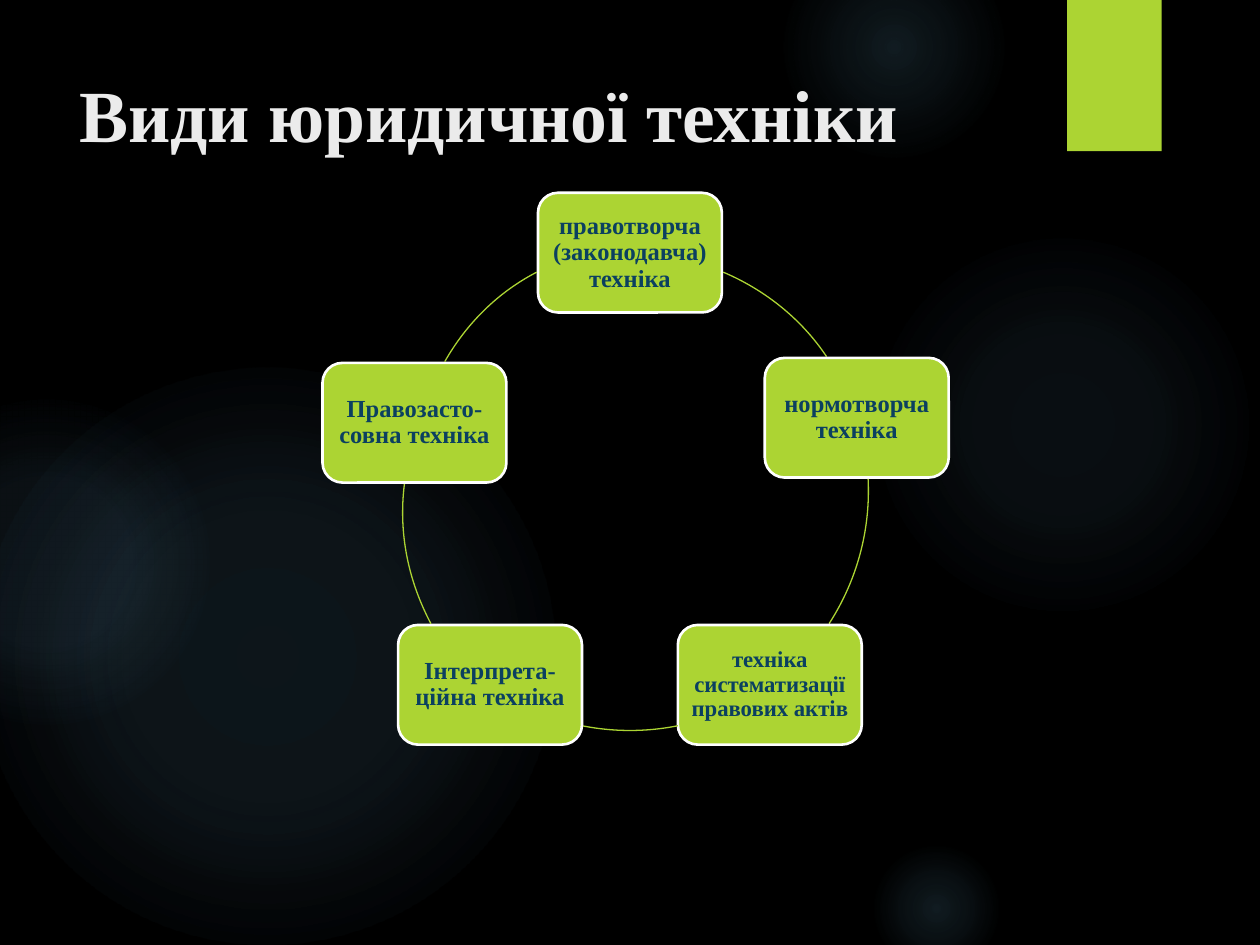
from typing import NamedTuple

from pptx import Presentation
from pptx.dml.color import RGBColor
from pptx.enum.shapes import MSO_SHAPE
from pptx.enum.text import MSO_ANCHOR, PP_ALIGN
from pptx.oxml import parse_xml
from pptx.oxml.ns import nsdecls, qn
from pptx.shapes.autoshape import Shape
from pptx.slide import Slide
from pptx.text.text import TextFrame
from pptx.util import Inches, Pt

BLACK = RGBColor(0x00, 0x00, 0x00)
WHITE = RGBColor(0xFF, 0xFF, 0xFF)
LIGHT = RGBColor(0xEB, 0xEB, 0xEB)
LIME = RGBColor(0xAC, 0xD4, 0x33)
NAVY = RGBColor(0x0B, 0x40, 0x60)
GLOW_BLUE = RGBColor(0x7A, 0xC4, 0xF0)
FONT = "Times New Roman"
NODE_WIDTH, NODE_HEIGHT = 1.46, 0.95
RING_SIZE = 3.79


class Point(NamedTuple):
    x: float
    y: float


class Glow(NamedTuple):
    left: float
    top: float
    size: float
    center_alpha: int
    middle_alpha: int
    edge: int


class Node(NamedTuple):
    left: float
    top: float
    text: str
    size: int = 14


class Arc(NamedTuple):
    ring: Point
    start: Point
    control_1: Point
    control_2: Point
    end: Point


GLOWS = [
    Glow(6.89, 1.83, 3.08, 7, 6, 69),
    Glow(6.22, -0.5, 1.75, 14, 7, 73),
    Glow(6.89, 6.67, 1.08, 14, 7, 66),
    Glow(-0.17, 2.92, 4.58, 11, 10, 75),
    Glow(-0.92, 3.17, 2.58, 8, 8, 72),
]
NODES = [
    Node(4.27, 1.53, "правотворча (законодавча) техніка"),
    Node(6.07, 2.84, "нормотворча техніка"),
    Node(5.38, 4.96, "техніка систематизації правових актів", 13),
    Node(3.16, 4.96, "Інтерпрета-ційна техніка"),
    Node(2.56, 2.88, "Правозасто-совна техніка"),
]
MAIN_RING = Point(3.11, 2)
ARCS = [
    Arc(MAIN_RING, Point(5.74, 2.16), Point(6.07, 2.3), Point(6.36, 2.53), Point(6.56, 2.83)),
    Arc(MAIN_RING, Point(6.89, 3.8), Point(6.91, 4.21), Point(6.8, 4.61), Point(6.58, 4.95)),
    Arc(MAIN_RING, Point(5.38, 5.76), Point(5.13, 5.81), Point(4.87, 5.81), Point(4.62, 5.76)),
    Arc(Point(3.19, 2.15), Point(3.42, 4.95), Point(3.24, 4.61), Point(3.16, 4.23), Point(3.21, 3.84)),
    Arc(Point(3.27, 1.92), Point(3.53, 2.87), Point(3.7, 2.57), Point(3.95, 2.32), Point(4.26, 2.16)),
]


def add_box(slide: Slide, kind: MSO_SHAPE, left: float, top: float, width: float, height: float) -> Shape:
    shape = slide.shapes.add_shape(kind, Inches(left), Inches(top), Inches(width), Inches(height))
    shape.shadow.inherit = False
    return shape


def add_glow(slide: Slide, glow: Glow) -> None:
    shape = add_box(slide, MSO_SHAPE.OVAL, glow.left, glow.top, glow.size, glow.size)
    stops = [(0, glow.center_alpha), (36, glow.middle_alpha), (glow.edge, 0)]
    stops_xml = "".join(
        f'<a:gs pos="{position * 1000}"><a:srgbClr val="{GLOW_BLUE}">'
        f'<a:alpha val="{alpha * 1000}"/></a:srgbClr></a:gs>'
        for position, alpha in stops
    )
    gradient = parse_xml(
        f'<a:gradFill {nsdecls("a")} rotWithShape="1"><a:gsLst>{stops_xml}</a:gsLst>'
        '<a:path path="circle"><a:fillToRect l="50000" t="50000" r="50000" b="50000"/>'
        "</a:path></a:gradFill>"
    )
    shape._element.spPr.insert(2, gradient)
    shape.line.fill.background()


def add_ribbon(slide: Slide) -> None:
    ribbon = add_box(slide, MSO_SHAPE.RECTANGLE, 8.47, 0, 0.75, 1.2)
    ribbon.fill.solid()
    ribbon.fill.fore_color.rgb = LIME
    ribbon.line.fill.background()


def write_text(frame: TextFrame, text: str, size: int, color: RGBColor, alignment: PP_ALIGN) -> None:
    frame.word_wrap = True
    paragraph = frame.paragraphs[0]
    paragraph.alignment = alignment
    run = paragraph.add_run()
    run.text = text
    run.font.name = FONT
    run.font.size = Pt(size)
    run.font.bold = True
    run.font.color.rgb = color


def add_title(slide: Slide, text: str) -> None:
    title = slide.shapes.add_textbox(Inches(0.53), Inches(0.5), Inches(7.72), Inches(1.53))
    write_text(title.text_frame, text, 42, LIGHT, PP_ALIGN.LEFT)


def add_node(slide: Slide, node: Node) -> None:
    shape = add_box(slide, MSO_SHAPE.ROUNDED_RECTANGLE, node.left, node.top, NODE_WIDTH, NODE_HEIGHT)
    shape.fill.solid()
    shape.fill.fore_color.rgb = LIME
    shape.line.color.rgb = WHITE
    shape.line.width = Pt(1.5)
    frame = shape.text_frame
    frame.vertical_anchor = MSO_ANCHOR.MIDDLE
    frame.margin_left = frame.margin_right = Inches(0.05)
    frame.margin_top = frame.margin_bottom = Inches(0.05)
    write_text(frame, node.text, node.size, NAVY, PP_ALIGN.CENTER)
    frame.paragraphs[0].line_spacing = 0.9


def add_arc(slide: Slide, arc: Arc) -> None:
    ring, *points = arc
    builder = slide.shapes.build_freeform(Inches(ring.x), Inches(ring.y))
    builder.add_line_segments([(Inches(ring.x + RING_SIZE), Inches(ring.y + RING_SIZE))], close=False)
    shape = builder.convert_to_shape()
    start, *curve = [
        f'<a:pt x="{Inches(point.x - ring.x)}" y="{Inches(point.y - ring.y)}"/>' for point in points
    ]
    size = Inches(RING_SIZE)
    outline = parse_xml(
        f'<a:path {nsdecls("a")} w="{size}" h="{size}" fill="none"><a:moveTo>{start}</a:moveTo>'
        f'<a:cubicBezTo>{"".join(curve)}</a:cubicBezTo></a:path>'
    )
    path_list = shape._element.spPr.find(qn("a:custGeom")).find(qn("a:pathLst"))
    path_list.replace(path_list[0], outline)
    shape.shadow.inherit = False
    shape.fill.background()
    shape.line.color.rgb = LIME
    shape.line.width = Pt(0.75)


def main() -> None:
    presentation = Presentation()
    presentation.slide_width = Inches(10)
    presentation.slide_height = Inches(7.5)
    slide = presentation.slides.add_slide(presentation.slide_layouts[6])
    slide.background.fill.solid()
    slide.background.fill.fore_color.rgb = BLACK

    for glow in GLOWS:
        add_glow(slide, glow)
    add_ribbon(slide)
    add_title(slide, "Види юридичної техніки")
    for node, arc in zip(NODES, ARCS):
        add_node(slide, node)
        add_arc(slide, arc)

    presentation.save("out.pptx")


if __name__ == "__main__":
    main()
